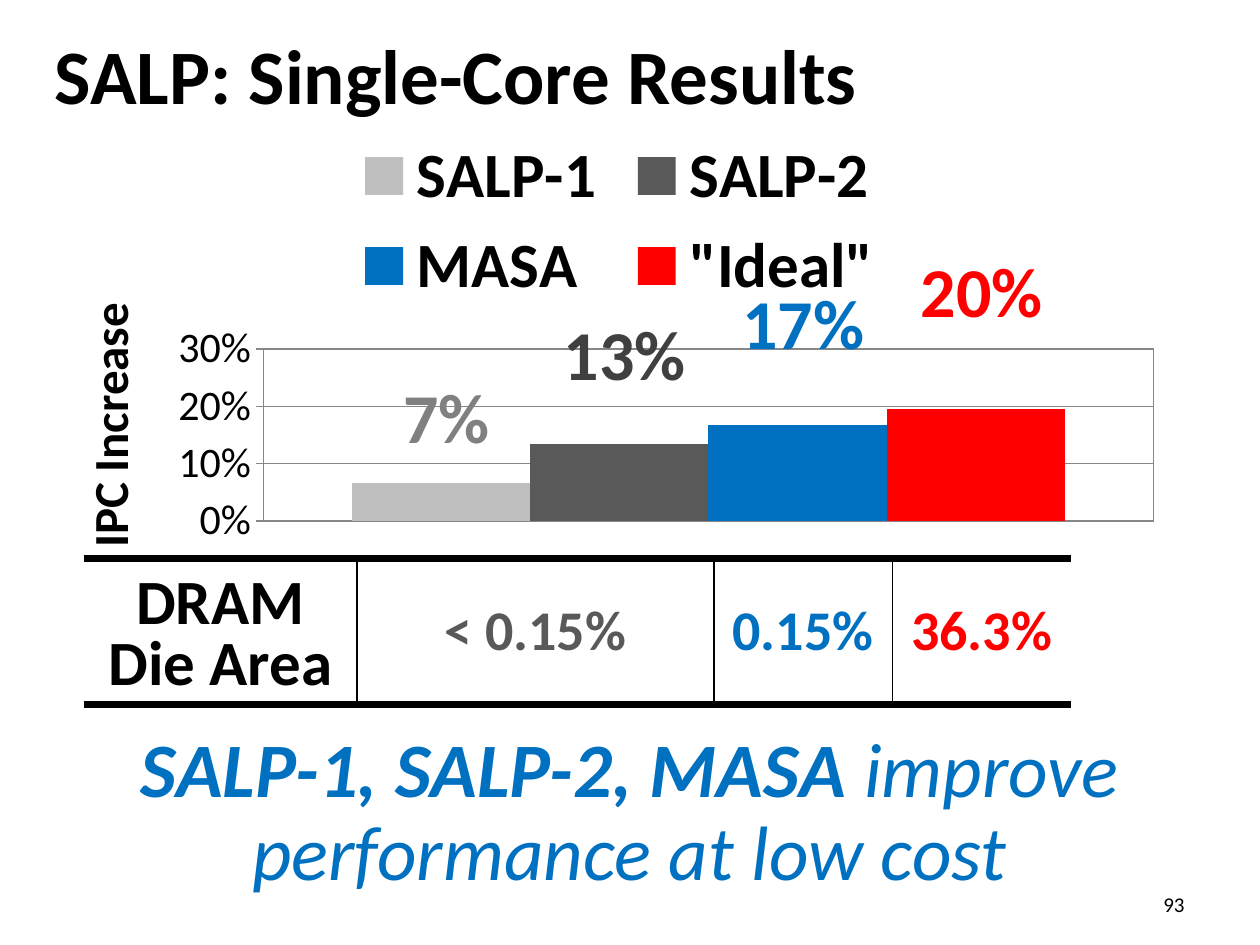
from lxml.etree import SubElement as Sub
from pptx import Presentation
from pptx.chart.data import CategoryChartData as Data
from pptx.dml.color import RGBColor
from pptx.enum.chart import XL_CHART_TYPE as Kind, XL_LEGEND_POSITION as Side
from pptx.enum.chart import XL_TICK_MARK as Tick
from pptx.enum.text import MSO_ANCHOR as Anchor, PP_ALIGN as Align
from pptx.oxml.ns import qn
from pptx.util import Inches, Pt

FACE = "Calibri"
BLACK, BLUE, RED, DARK, LINE = "000000", "0070C0", "FF0000", "595959", "878787"
BARS = [("SALP-1", 0.066, "BFBFBF"), ("SALP-2", 0.134, DARK),
        ("MASA", 0.167, BLUE), ('"Ideal"', 0.196, RED)]
MARKS = [("7%", 35, "808080"), ("13%", 29, "404040"),
         ("17%", 26, BLUE), ("20%", 23, RED)]
CELLS = [("DRAM Die Area", 26, 36, BLACK), ("< 0.15%", 34, 32, DARK),
         ("0.15%", 17, 32, BLUE), ("36.3%", 17, 32, RED)]


def unit(n):
    """Length of n grid steps; the slide is 120 columns by 90 rows."""
    return Inches(n / 12)


def area(*box):
    return [unit(n) for n in box]


def tint(code):
    return RGBColor.from_string(code)


def style(font, size, color=BLACK, bold=False, italic=False):
    font.name, font.size = FACE, Pt(size)
    font.bold, font.italic = bold, italic
    font.color.rgb = tint(color)


def write(frame, runs, align=Align.CENTER, anchor=Anchor.TOP, space=None):
    """Fill a text frame with one paragraph of (text, size, color, bold, italic)."""
    frame.word_wrap = True
    frame.vertical_anchor = anchor
    para = frame.paragraphs[0]
    para.alignment, para.line_spacing = align, space
    for text, *look in runs:
        run = para.add_run()
        run.text = text
        style(run.font, *look)


def add_text(slide, box, runs, **opts):
    write(slide.shapes.add_textbox(*area(*box)).text_frame, runs, **opts)


def add_title(slide, box, text):
    title = slide.shapes.title
    title.left, title.top, title.width, title.height = area(*box)
    write(title.text_frame, [(text, 44, BLACK, True)], Align.LEFT, Anchor.MIDDLE)


def place_plot(chart, **shares):
    """Pin the inner plot area to shares of the chart's size."""
    plot = chart._chartSpace.chart.plotArea
    layout = plot.find(qn("c:layout"))
    if layout is None:
        layout = plot.makeelement(qn("c:layout"))
        plot.insert(0, layout)
    manual = Sub(layout, qn("c:manualLayout"))
    rules = {"layoutTarget": "inner", "xMode": "edge", "yMode": "edge", **shares}
    for tag, val in rules.items():
        Sub(manual, qn("c:" + tag)).set("val", str(val))


def add_bars(slide, box):
    data = Data(number_format="0%")
    data.categories = ["1"]
    for name, val, _ in BARS:
        data.add_series(name, [val])
    chart = slide.shapes.add_chart(Kind.COLUMN_CLUSTERED, *area(*box), data).chart
    style(chart.font, 10)
    chart.has_title = False
    chart.has_legend = True
    chart.legend.position = Side.TOP
    chart.legend.include_in_layout = False
    style(chart.legend.font, 36, bold=True)

    plot = chart.plots[0]
    plot.gap_width, plot.overlap, plot.vary_by_categories = 100, 0, False
    for bar, (_, _, color) in zip(plot.series, BARS):
        bar.format.fill.solid()
        bar.format.fill.fore_color.rgb = tint(color)

    cat, val = chart.category_axis, chart.value_axis
    cat.visible = False
    for axis in (cat, val):
        axis.has_major_gridlines = True
        axis.major_gridlines.format.line.color.rgb = tint(LINE)
    val.minimum_scale, val.maximum_scale, val.major_unit = 0, 0.3, 0.1
    val.major_tick_mark = Tick.OUTSIDE
    val.format.line.color.rgb = tint(LINE)
    val.tick_labels.number_format = "0%"
    val.tick_labels.number_format_is_linked = False
    style(val.tick_labels.font, 24)
    write(val.axis_title.text_frame, [("IPC Increase", 28, BLACK, True)])
    place_plot(chart, x=0.18, y=0.53, w=0.8, h=0.39)


def add_marks(slide, left, step):
    for i, (text, top, color) in enumerate(MARKS):
        add_text(slide, (left + i * step, top, 15, 9.2), [(text, 40, color, True)])


def edge(cell, side, width):
    """Draw one border of a cell, or none when width is 0."""
    line = Sub(cell._tc.get_or_add_tcPr(), qn("a:ln" + side), w=str(Pt(width)))
    if width:
        fill = Sub(line, qn("a:solidFill"))
        Sub(fill, qn("a:srgbClr"), val=BLACK)
    else:
        Sub(line, qn("a:noFill"))


def add_costs(slide, box):
    last = len(CELLS) - 1
    table = slide.shapes.add_table(1, len(CELLS), *area(*box)).table
    table.first_row = table.horz_banding = False
    for i, (text, cols, size, color) in enumerate(CELLS):
        table.columns[i].width = unit(cols)
        cell = table.cell(0, i)
        write(cell.text_frame, [(text, size, color, True)],
              space=None if i else 0.8)
        cell.vertical_anchor = Anchor.MIDDLE if i else Anchor.BOTTOM
        for side, width in (("L", i > 0), ("R", i < last), ("T", 4.5), ("B", 4.5)):
            edge(cell, side, width)
        cell.fill.background()


def main():
    deck = Presentation()
    deck.slide_width, deck.slide_height = area(120, 90)
    slide = deck.slides.add_slide(deck.slide_layouts[5])
    add_title(slide, (4, 1, 112, 12), "SALP: Single-Core Results")
    add_text(slide, (86, 84, 28, 4.2), [("93", 12)],
             align=Align.RIGHT, anchor=Anchor.MIDDLE)
    add_bars(slide, (6, 11, 106, 42))
    add_text(slide, (12, 69, 96, 17.2),
             [("SALP-1, SALP-2, MASA", 44, BLUE, True, True),
              (" improve performance at low cost", 44, BLUE, False, True)],
             space=0.9)
    add_marks(slide, 35, 17)
    add_costs(slide, (8, 53.2, 94, 13.9))
    deck.save("out.pptx")


if __name__ == "__main__":
    main()
